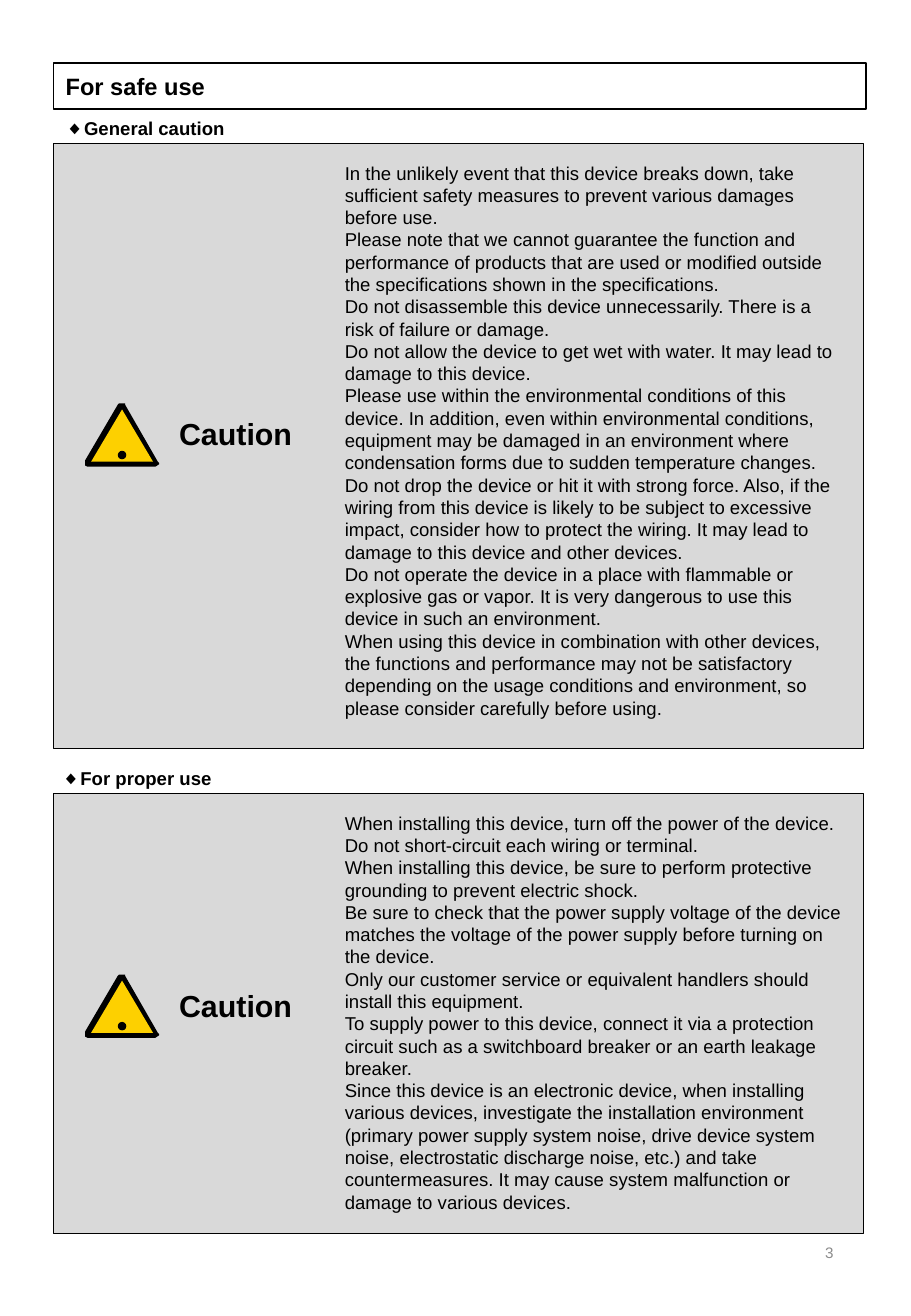
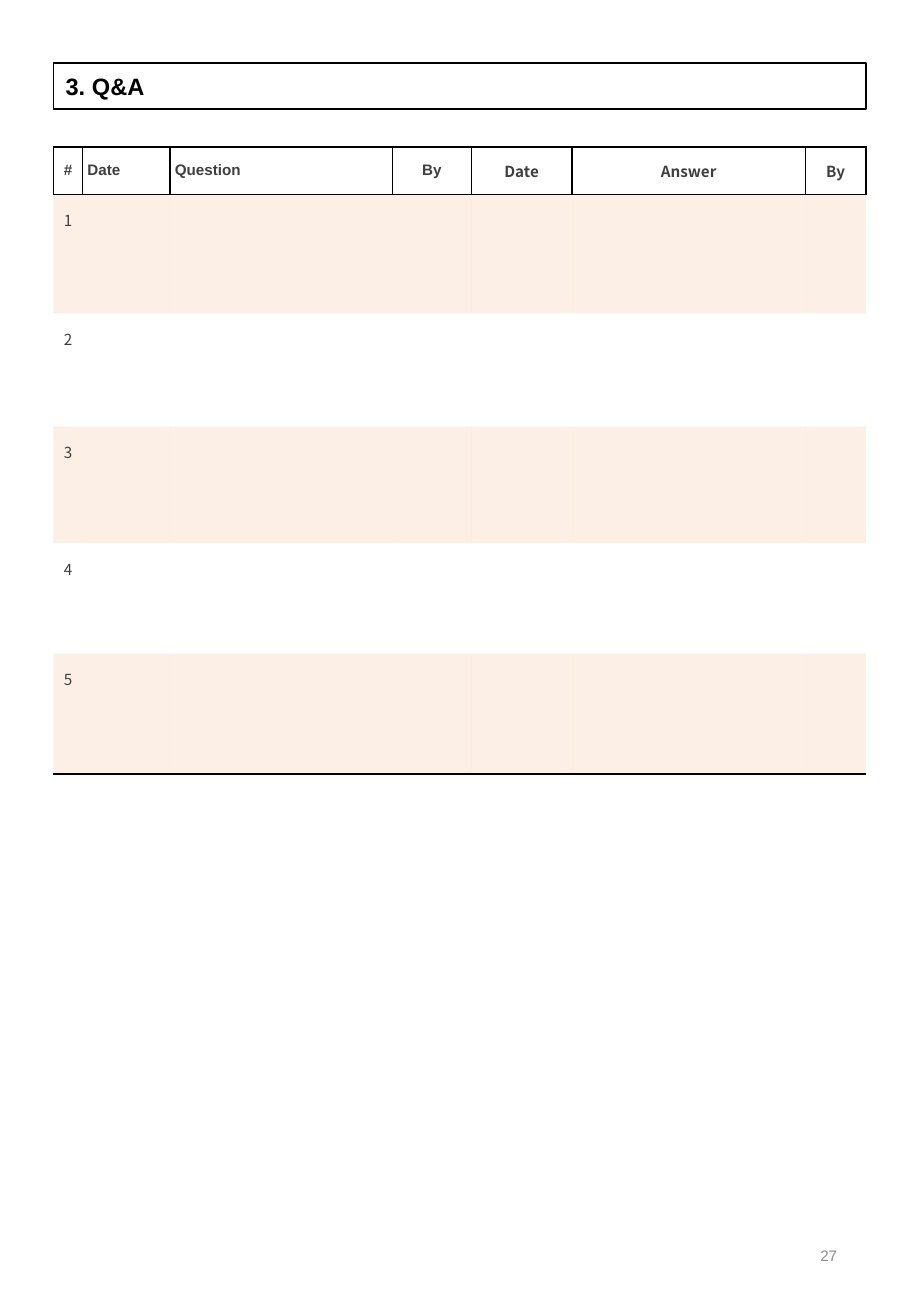
from lxml.etree import SubElement
from pptx import Presentation
from pptx.dml.color import RGBColor
from pptx.enum.shapes import MSO_SHAPE
from pptx.enum.text import MSO_ANCHOR, MSO_AUTO_SIZE, PP_ALIGN
from pptx.oxml.ns import qn
from pptx.util import Pt

BLACK = RGBColor(0x00, 0x00, 0x00)
PANEL_GRAY = RGBColor(0xD9, 0xD9, 0xD9)
NUMBER_GRAY = RGBColor(0x8C, 0x8C, 0x8C)
TABLE_GRAY = RGBColor(0x3F, 0x3F, 0x3F)
SIGN_YELLOW = RGBColor(0xFD, 0xD0, 0x00)
BAND_ORANGE = RGBColor(0xF4, 0xB1, 0x83)
BAND_OPACITY = "20000"

LATIN_FONT = "Arial"
JAPANESE_FONT = "Noto Sans CJK JP"
NO_GRID_STYLE = "{2D5ABB26-0587-4C30-8999-92F81FD0307C}"

EMU_PER_PX = 9144
SLIDE_SIZE = (750, 1083)
LEFT = 44
CONTENT_WIDTH = 669
PANEL_WIDTH = 667
SIGN_LEFT = 70
SIGN_OUTLINE = [(58, 52), (2, 52), (0, 51), (0, 47), (27, 1), (28, 0),
                (33, 0), (33, 1), (60, 48), (61, 49), (61, 50)]

SAFETY_TITLE = "For safe use"
SAFETY_PANELS = [
    {
        "heading": "◆General caution",
        "heading_left": 44,
        "top": 118,
        "height": 498,
        "sign_top": 332,
        "notes": [
            "In the unlikely event that this device breaks down, take sufficient safety measures "
            "to prevent various damages before use.",
            "Please note that we cannot guarantee the function and performance of products that "
            "are used or modified outside the specifications shown in the specifications.",
            "Do not disassemble this device unnecessarily. There is a risk of failure or damage.",
            "Do not allow the device to get wet with water. It may lead to damage to this device.",
            "Please use within the environmental conditions of this device. In addition, even "
            "within environmental conditions, equipment may be damaged in an environment where "
            "condensation forms due to sudden temperature changes.",
            "Do not drop the device or hit it with strong force. Also, if the wiring from this "
            "device is likely to be subject to excessive impact, consider how to protect the "
            "wiring. It may lead to damage to this device and other devices.",
            "Do not operate the device in a place with flammable or explosive gas or vapor. It is "
            "very dangerous to use this device in such an environment.",
            "When using this device in combination with other devices, the functions and "
            "performance may not be satisfactory depending on the usage conditions and "
            "environment, so please consider carefully before using.",
        ],
    },
    {
        "heading": "◆For proper use",
        "heading_left": 41,
        "top": 653,
        "height": 362,
        "sign_top": 802,
        "notes": [
            "When installing this device, turn off the power of the device. Do not short-circuit "
            "each wiring or terminal.",
            "When installing this device, be sure to perform protective grounding to prevent "
            "electric shock.",
            "Be sure to check that the power supply voltage of the device matches the voltage of "
            "the power supply before turning on the device.",
            "Only our customer service or equivalent handlers should install this equipment.",
            "To supply power to this device, connect it via a protection circuit such as a "
            "switchboard breaker or an earth leakage breaker.",
            "Since this device is an electronic device, when installing various devices, "
            "investigate the installation environment (primary power supply system noise, drive "
            "device system noise, electrostatic discharge noise, etc.) and take countermeasures. "
            "It may cause system malfunction or damage to various devices.",
        ],
    },
]

QUESTION_TITLE = "3. Q&A"
QUESTION_COLUMNS = [
    ("#", 24, PP_ALIGN.CENTER, LATIN_FONT),
    ("Date", 72, PP_ALIGN.LEFT, LATIN_FONT),
    ("Question", 183, PP_ALIGN.LEFT, LATIN_FONT),
    ("By", 65, PP_ALIGN.CENTER, LATIN_FONT),
    ("Date", 83, PP_ALIGN.CENTER, JAPANESE_FONT),
    ("Answer", 192, PP_ALIGN.CENTER, JAPANESE_FONT),
    ("By", 50, PP_ALIGN.CENTER, JAPANESE_FONT),
]
QUESTION_ROW_HEIGHTS = [39, 98, 93, 96, 91, 99]


def px(*lengths):
    return [length * EMU_PER_PX for length in lengths]


def add_run(paragraph, text, size, color=BLACK, bold=False, font=LATIN_FONT):
    run = paragraph.add_run()
    run.text = text
    run.font.name = font
    run.font.size = Pt(size)
    run.font.bold = bold
    run.font.color.rgb = color


def add_text(slide, box, lines, size, color=BLACK, bold=False,
             align=PP_ALIGN.LEFT, anchor=MSO_ANCHOR.TOP):
    frame = slide.shapes.add_textbox(*px(*box)).text_frame
    frame.word_wrap = True
    frame.vertical_anchor = anchor
    for index, line in enumerate(lines):
        paragraph = frame.add_paragraph() if index else frame.paragraphs[0]
        paragraph.alignment = align
        add_run(paragraph, line, size, color, bold)


def paint(shape, fill, line_width=None):
    shape.shadow.inherit = False
    shape.fill.solid()
    shape.fill.fore_color.rgb = fill
    if line_width is None:
        shape.line.fill.background()
    else:
        shape.line.color.rgb = BLACK
        shape.line.width = Pt(line_width)


def add_page(presentation, title_text, number, number_left, number_top):
    slide = presentation.slides.add_slide(presentation.slide_layouts[5])
    title = slide.shapes.title
    title.left, title.top, title.width, title.height = px(LEFT, 52, CONTENT_WIDTH, 38)
    title.line.color.rgb = BLACK
    title.line.width = Pt(1)
    frame = title.text_frame
    frame.auto_size = MSO_AUTO_SIZE.NONE
    frame.vertical_anchor = MSO_ANCHOR.MIDDLE
    paragraph = frame.paragraphs[0]
    paragraph.alignment = PP_ALIGN.LEFT
    add_run(paragraph, title_text, 14, bold=True)
    add_text(slide, (number_left, number_top, 169, 58), [number], 9, NUMBER_GRAY,
             align=PP_ALIGN.RIGHT, anchor=MSO_ANCHOR.MIDDLE)
    return slide


def add_warning_sign(slide, left, top):
    builder = slide.shapes.build_freeform(*SIGN_OUTLINE[0], scale=EMU_PER_PX)
    builder.add_line_segments(SIGN_OUTLINE[1:], close=True)
    paint(builder.convert_to_shape(*px(left, top)), BLACK)
    for preset, box, color in [
        (MSO_SHAPE.ISOSCELES_TRIANGLE, (left + 5, top + 5, 51, 43), SIGN_YELLOW),
        (MSO_SHAPE.OVAL, (left + 27, top + 39, 7, 7), BLACK),
    ]:
        paint(slide.shapes.add_shape(preset, *px(*box)), color)


def add_safety_panel(slide, panel):
    top, height, sign_top = panel["top"], panel["height"], panel["sign_top"]
    background = slide.shapes.add_shape(MSO_SHAPE.RECTANGLE, *px(LEFT, top, PANEL_WIDTH, height))
    paint(background, PANEL_GRAY, 0.25)
    add_text(slide, (panel["heading_left"], top - 27, CONTENT_WIDTH, 29),
             [panel["heading"]], 11, bold=True)
    add_warning_sign(slide, SIGN_LEFT, sign_top)
    add_text(slide, (121, sign_top + 5, 146, 40), ["Caution"], 18, bold=True,
             align=PP_ALIGN.CENTER, anchor=MSO_ANCHOR.MIDDLE)
    add_text(slide, (274, top + 10, 429, height - 22), panel["notes"], 11)


def add_borders(cell, sides):
    properties = cell._tc.get_or_add_tcPr()
    for side in sides:
        line = SubElement(properties, qn(f"a:ln{side}"), w=str(Pt(1)))
        fill = SubElement(line, qn("a:solidFill"))
        SubElement(fill, qn("a:srgbClr"), val=str(BLACK))


def fill_band(cell):
    cell.fill.solid()
    cell.fill.fore_color.rgb = BAND_ORANGE
    color = cell._tc.tcPr.find(qn("a:solidFill")).find(qn("a:srgbClr"))
    SubElement(color, qn("a:alpha"), val=BAND_OPACITY)


def write_cell(cell, text, align, font, bold, margin_left=1, margin_top=1):
    cell.margin_left, cell.margin_top, cell.margin_right, cell.margin_bottom = px(
        margin_left, margin_top, 1, 1)
    paragraph = cell.text_frame.paragraphs[0]
    paragraph.alignment = align
    add_run(paragraph, text, 9, TABLE_GRAY, bold, font)


def add_question_table(slide):
    row_count, column_count = len(QUESTION_ROW_HEIGHTS), len(QUESTION_COLUMNS)
    box = px(LEFT, 121, CONTENT_WIDTH, sum(QUESTION_ROW_HEIGHTS))
    table = slide.shapes.add_table(row_count, column_count, *box).table
    table.horz_banding = False
    table.first_row = False
    table._tbl.tblPr.find(qn("a:tableStyleId")).text = NO_GRID_STYLE
    for row, height in zip(table.rows, QUESTION_ROW_HEIGHTS):
        row.height = height * EMU_PER_PX
    for column_index, (label, width, align, font) in enumerate(QUESTION_COLUMNS):
        table.columns[column_index].width = width * EMU_PER_PX
        for row_index in range(row_count):
            cell = table.cell(row_index, column_index)
            if row_index == 0:
                add_borders(cell, "LRTB")
                cell.vertical_anchor = MSO_ANCHOR.MIDDLE
                write_cell(cell, label, align, font, True,
                           margin_left=4 if align == PP_ALIGN.LEFT else 1)
            elif row_index == row_count - 1:
                add_borders(cell, "B")
            if row_index % 2:
                fill_band(cell)
            else:
                cell.fill.background()
            if row_index and column_index == 0:
                write_cell(cell, str(row_index), align, JAPANESE_FONT, False, margin_top=12)


def main():
    presentation = Presentation()
    presentation.slide_width, presentation.slide_height = px(*SLIDE_SIZE)
    safety_slide = add_page(presentation, SAFETY_TITLE, "3", 527, 1002)
    for panel in SAFETY_PANELS:
        add_safety_panel(safety_slide, panel)
    question_slide = add_page(presentation, QUESTION_TITLE, "27", 530, 1004)
    add_question_table(question_slide)
    presentation.save("out.pptx")


if __name__ == "__main__":
    main()
